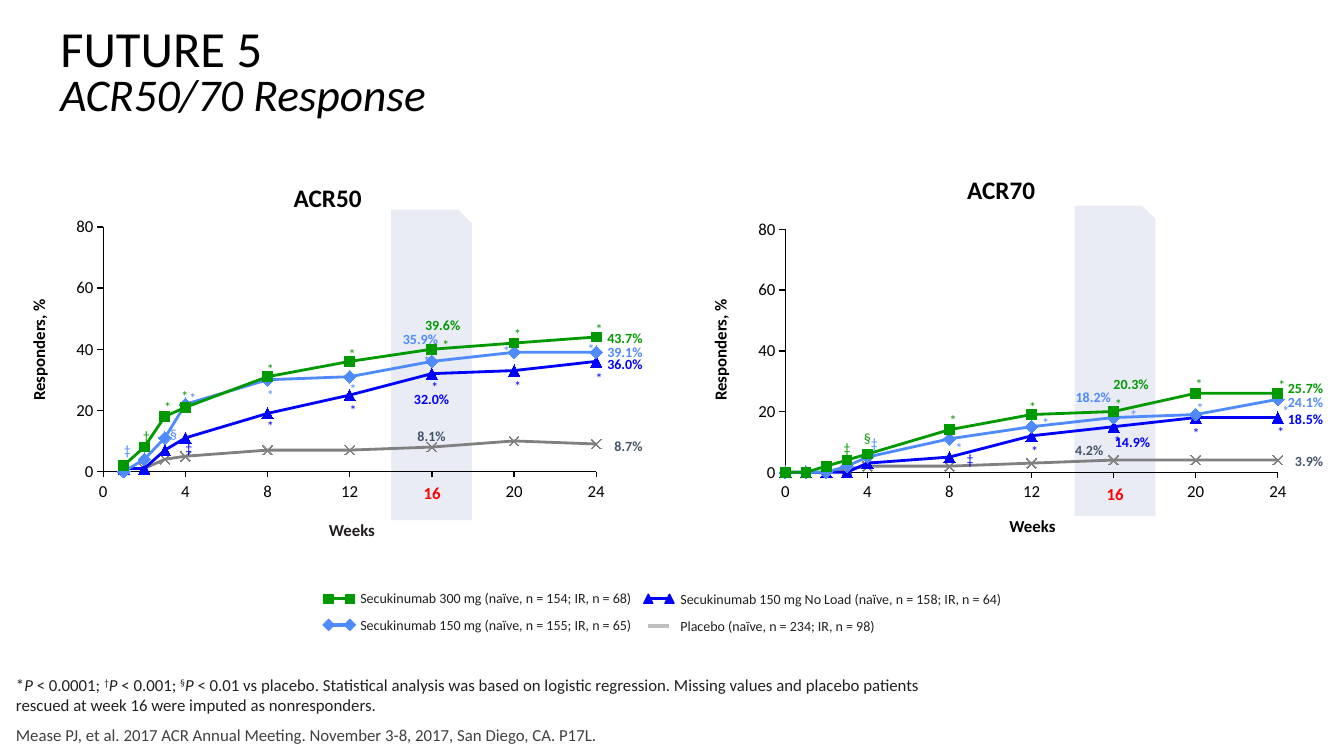
"""Build the FUTURE 5 slide: ACR50 and ACR70 response curves on a 0.1 inch grid."""
from dataclasses import dataclass
from typing import NamedTuple, Optional

from lxml.etree import SubElement
from pptx import Presentation
from pptx.chart.data import XyChartData
from pptx.dml.color import RGBColor
from pptx.enum.chart import XL_CHART_TYPE, XL_MARKER_STYLE, XL_TICK_MARK
from pptx.enum.shapes import MSO_CONNECTOR, MSO_SHAPE
from pptx.enum.text import MSO_ANCHOR, PP_ALIGN
from pptx.oxml import parse_xml
from pptx.oxml.ns import nsdecls, qn
from pptx.util import Inches, Pt

COLUMNS, ROWS, CELL = 133.3, 75, 0.1
FACE = "Calibri"
GREEN, SKY, BLUE, GREY, SLATE = "009900", "4F8AFF", "0000FF", "808080", "44546A"
BLACK, INK, BAND, RED = "000000", "231F20", "E9EBF5", "FF0000"
LEFT, CENTER, RIGHT = PP_ALIGN.LEFT, PP_ALIGN.CENTER, PP_ALIGN.RIGHT
INSETS, FLUSH = (1, 0.5, 1, 0.5), (0, 0, 0, 0)
WEEKS = (0, 1, 2, 3, 4, 8, 12, 16, 20, 24)


class Box(NamedTuple):
    left: float
    top: float
    width: float
    height: float


class Style(NamedTuple):
    colour: str
    marker: XL_MARKER_STYLE
    size: int


class Label(NamedTuple):
    text: str
    left: float
    top: float
    colour: str
    align: PP_ALIGN = RIGHT


class Span(NamedTuple):
    text: str
    italic: bool = False
    raised: bool = False


class Key(NamedTuple):
    left: float
    middle: float
    colour: str
    shape: Optional[MSO_SHAPE] = None
    turn: int = 0


@dataclass
class Panel:
    title: str
    title_box: Box
    band: Box
    chart: Box
    plot: tuple
    curves: tuple
    marks: dict
    labels: tuple
    week_box: Box
    weeks: Box
    weeks_colour: str
    axis_title: Box


STYLES = (Style(GREEN, XL_MARKER_STYLE.SQUARE, 7), Style(SKY, XL_MARKER_STYLE.DIAMOND, 9),
          Style(BLUE, XL_MARKER_STYLE.TRIANGLE, 8), Style(GREY, XL_MARKER_STYLE.X, 7))

ACR70 = Panel(
    "ACR70", Box(90.8, 16.8, 17, 4), Box(106.6, 20.4, 8, 30.8), Box(72.9, 20.6, 55.5, 30.9),
    (0.09, 0.07, 0.88, 0.78),
    ((0, 0, 2, 4, 6, 14, 19, 20, 26, 26), (0, 0, 0, 2, 5, 11, 15, 18, 19, 24),
     (0, 0, 0, 0, 3, 5, 12, 15, 18, 18), (0, 0, 0, 1, 2, 2, 3, 4, 4, 4)),
    {GREEN: (("‡", 82.7, 43.1), ("§", 84.7, 42.1), ("*", 93.2, 40.3), ("*", 101.1, 39),
             ("*", 109.6, 38.7), ("*", 117.6, 36.8), ("*", 125.8, 36.9)),
     SKY: (("‡", 85.4, 42.6), ("*", 93.8, 43.1), ("*", 102.4, 40.6), ("*", 111.1, 39.8),
           ("*", 117.7, 39.1), ("*", 126.2, 39.4)),
     BLUE: (("‡", 94.9, 44.2), ("*", 101.3, 43.4), ("*", 109.5, 42.4), ("*", 117.3, 41.6),
            ("*", 125.7, 41.5))},
    (Label("3.9%", 126.2, 44.4, SLATE), Label("24.1%", 126.2, 38.5, SKY),
     Label("18.5%", 126.2, 40.2, BLUE), Label("25.7%", 126.2, 37.2, GREEN),
     Label("4.2%", 104.4, 43.3, SLATE), Label("18.2%", 105.7, 38.1, SKY, LEFT),
     Label("14.9%", 109.6, 42.5, BLUE, LEFT), Label("20.3%", 108.9, 36.8, GREEN)),
    Box(109.6, 48, 2, 2.9), Box(78, 51.2, 48.8, 2), BLACK, Box(59.5, 33.2, 23.8, 3))

ACR50 = Panel(
    "ACR50", Box(24, 17.6, 17, 4), Box(38.8, 20.8, 8, 30.8), Box(4.56, 19.78, 56.86, 30.35),
    (0.1, 0.09, 0.86, 0.8),
    ((None, 2, 8, 18, 21, 31, 36, 40, 42, 44), (None, 0, 4, 11, 22, 30, 31, 36, 39, 39),
     (None, 1, 1, 7, 11, 19, 25, 32, 33, 36), (None, 1, 1, 4, 5, 7, 7, 8, 10, 9)),
    {GREEN: (("†", 13.2, 41.9), ("*", 15.3, 39), ("*", 17, 38), ("*", 25.5, 35.3),
             ("*", 33.6, 33.8), ("*", 42.9, 32.9), ("*", 50, 31.8), ("*", 58.1, 31.3)),
     SKY: (("‡", 11.3, 43.3), ("§", 15.9, 41.7), ("*", 17.8, 38.2), ("*", 25.5, 37.9),
           ("*", 33.7, 37.3), ("*", 41, 34.5), ("*", 48.9, 33.5), ("*", 57.3, 33.3)),
     BLUE: (("‡", 17.4, 43.1), ("*", 25.5, 40.9), ("*", 33.7, 39.3), ("*", 41.8, 37.1),
            ("*", 50, 37), ("*", 58.1, 36.2))},
    (Label("8.7%", 58.7, 42.9, SLATE), Label("39.1%", 58.7, 33.6, SKY),
     Label("36.0%", 58.7, 34.8, BLUE), Label("43.7%", 58.7, 32.2, GREEN),
     Label("8.1%", 39.8, 41.9, SLATE, CENTER), Label("35.9%", 38.7, 32.3, SKY, CENTER),
     Label("32.0%", 39.8, 38.3, BLUE, CENTER), Label("39.6%", 40.9, 30.9, GREEN, CENTER)),
    Box(41.5, 47.9, 2.7, 2.9), Box(10.5, 51.6, 48.8, 2), INK, Box(-8.3, 33.2, 24.2, 3))

KEYS = (Key(32.6, 59.4, GREEN, MSO_SHAPE.RECTANGLE), Key(32.6, 62, SKY, MSO_SHAPE.RECTANGLE, 45),
        Key(64.3, 59.4, BLUE, MSO_SHAPE.ISOSCELES_TRIANGLE), Key(64.3, 62.1, "BFBFBF"))

FOOTNOTE = (Span("*"), Span("P", True), Span(" < 0.0001; "), Span("†", raised=True),
            Span("P", True), Span(" < 0.001; "), Span("§", raised=True), Span("P", True),
            Span(" < 0.01 vs placebo. Statistical analysis was based on logistic regression. "
                 "Missing values and placebo patients rescued at week 16 were imputed as "
                 "nonresponders."))


def cells(*counts: float) -> list:
    """Turn counts of grid cells into lengths."""
    return [Inches(round(count * CELL, 3)) for count in counts]


def rgb(value: str) -> RGBColor:
    """Turn a hex string into a colour."""
    return RGBColor.from_string(value)


def add_shape(page, kind: MSO_SHAPE, box: Box, colour: str, outline: bool = False):
    """Draw a filled preset shape."""
    shape = page.shapes.add_shape(kind, *cells(*box))
    shape.shadow.inherit = False
    shape.fill.solid()
    shape.fill.fore_color.rgb = rgb(colour)
    if outline:
        shape.line.color.rgb = rgb(colour)
        shape.line.width = Pt(1)
    else:
        shape.line.fill.background()
    return shape


def write(shape, text: str, size: float, colour: str, bold: bool = False, align=LEFT,
          anchor=MSO_ANCHOR.TOP, insets: tuple = INSETS):
    """Put formatted text into a shape."""
    frame = shape.text_frame
    frame.word_wrap = True
    frame.vertical_anchor = anchor
    frame.margin_left, frame.margin_top, frame.margin_right, frame.margin_bottom = cells(*insets)
    frame.text = text
    for para in frame.paragraphs:
        para.alignment = align
        for span in para.runs:
            span.font.name, span.font.size, span.font.bold = FACE, Pt(size), bold
            span.font.color.rgb = rgb(colour)
    return shape


def add_text(page, box: Box, text: str, size: float, colour: str, **options):
    """Add a text box and write into it."""
    return write(page.shapes.add_textbox(*cells(*box)), text, size, colour, **options)


def style_axis(axis, top: int, step: int) -> None:
    """Format one black axis with outer ticks."""
    axis.minimum_scale, axis.maximum_scale, axis.major_unit = 0, top, step
    axis.has_major_gridlines = False
    axis.major_tick_mark, axis.minor_tick_mark = XL_TICK_MARK.OUTSIDE, XL_TICK_MARK.NONE
    axis.format.line.color.rgb = rgb(BLACK)
    axis.format.line.width = Pt(1)
    font = axis.tick_labels.font
    font.name, font.size, font.color.rgb = FACE, Pt(12), rgb(BLACK)


def add_curves(page, panel: Panel) -> None:
    """Draw the response curves of one panel, leaving missing values blank."""
    data = XyChartData()
    for number, values in enumerate(panel.curves, 1):
        series = data.add_series(f"Series {number}")
        for week, value in zip(WEEKS, values):
            series.add_data_point(week, value)
    chart = page.shapes.add_chart(XL_CHART_TYPE.XY_SCATTER_LINES, *cells(*panel.chart), data).chart
    root = chart.element
    for point in list(root.iter(qn("c:pt"))):
        if point.find(qn("c:v")).text in (None, "", "None"):
            point.getparent().remove(point)
    chart.has_legend = chart.has_title = False
    chart.font.name, chart.font.size, chart.font.color.rgb = FACE, Pt(18), rgb(BLACK)
    chart.plots[0].vary_by_categories = False
    style_axis(chart.category_axis, 24, 4)
    style_axis(chart.value_axis, 80, 20)
    for series, style in zip(chart.plots[0].series, STYLES):
        series.smooth = False
        series.marker.style, series.marker.size = style.marker, style.size
        for line in (series.format.line, series.marker.format.line):
            line.color.rgb = rgb(style.colour)
        series.format.line.width = Pt(2)
        fill = series.marker.format.fill
        if style.marker == XL_MARKER_STYLE.X:
            fill.background()
        else:
            fill.solid()
            fill.fore_color.rgb = rgb(style.colour)
    area = root.find(".//" + qn("c:plotArea"))
    for layout in area.findall(qn("c:layout")):
        area.remove(layout)
    layout = parse_xml(f"<c:layout {nsdecls('c')}><c:manualLayout/></c:layout>")
    names = ("layoutTarget", "xMode", "yMode", "x", "y", "w", "h")
    for name, value in zip(names, ("inner", "edge", "edge", *panel.plot)):
        SubElement(layout[0], qn("c:" + name)).set("val", str(value))
    area.insert(0, layout)
    clear = f"<c:spPr {nsdecls('c', 'a')}><a:noFill/><a:ln><a:noFill/></a:ln></c:spPr>"
    area.append(parse_xml(clear))
    root.find(qn("c:txPr")).addprevious(parse_xml(clear))


def add_panel(page, panel: Panel) -> None:
    """Draw one chart with its band, marks and labels."""
    add_shape(page, MSO_SHAPE.SNIP_1_RECTANGLE, panel.band, BAND)
    add_text(page, panel.title_box, panel.title, 18, BLACK, bold=True, align=CENTER)
    add_curves(page, panel)
    for colour, marks in panel.marks.items():
        for symbol, left, top in marks:
            add_text(page, Box(left, top, 2.7, 2.7), symbol, 10, colour, insets=(1, 0.5, 0, 0.5))
    week = add_shape(page, MSO_SHAPE.RECTANGLE, panel.week_box, BAND)
    write(week, "16", 12, RED, bold=True, align=CENTER, insets=(0, 0, 0, 0.9))
    for label in panel.labels:
        add_text(page, Box(label.left, label.top, 6, 2.7), label.text, 10, label.colour,
                 bold=True, align=label.align)
    add_text(page, panel.weeks, "Weeks", 12, panel.weeks_colour, bold=True, align=CENTER,
             insets=FLUSH)
    add_text(page, panel.axis_title, "Responders, %", 12, BLACK, bold=True, align=CENTER,
             anchor=MSO_ANCHOR.BOTTOM).rotation = 270


def add_key(page, key: Key) -> None:
    """Draw one legend sample: a line with a marker at each end."""
    ends = (key.left, key.left + 2.1)
    if key.shape is not None:
        for end in ends:
            box = Box(end - 0.45, key.middle - 0.45, 0.9, 0.9)
            add_shape(page, key.shape, box, key.colour, not key.turn).rotation = key.turn
    line = page.shapes.add_connector(
        MSO_CONNECTOR.STRAIGHT, *cells(ends[0], key.middle, ends[1], key.middle))
    line.line.color.rgb = rgb(key.colour)
    line.line.width = Pt(2.25)
    SubElement(line.element.spPr, qn("a:effectLst"))


def add_legend(page) -> None:
    """Draw the two legend columns."""
    columns = (
        (Box(34.75, 58, 29.9, 5.4), "Secukinumab 300 mg (naïve, n = 154; IR, n = 68)\n"
                                    "Secukinumab 150 mg (naïve, n = 155; IR, n = 65)"),
        (Box(66.5, 58.1, 34.7, 5.4), "Secukinumab 150 mg No Load (naïve, n = 158; IR, n = 64)\n"
                                     "Placebo (naïve, n = 234; IR, n = 98)"))
    for box, text in columns:
        add_text(page, box, text, 10, INK).text_frame.paragraphs[1].space_before = Pt(7.3)
    for key in KEYS:
        add_key(page, key)


def add_wording(page) -> None:
    """Add the title, the footnote and the citation."""
    title = add_text(page, Box(5, 2, 106.9, 10.8), "FUTURE 5\nACR50/70 Response", 36.1, BLACK,
                     anchor=MSO_ANCHOR.MIDDLE)
    for para in title.text_frame.paragraphs:
        para.line_spacing = 0.8
    subtitle = title.text_frame.paragraphs[1].runs[0].font
    subtitle.size, subtitle.italic = Pt(32.4), True
    add_text(page, Box(0.6, 71.4, 66.3, 3),
             "Mease PJ, et al. 2017 ACR Annual Meeting. November 3-8, 2017, San Diego, CA. P17L.",
             12, "404040", anchor=MSO_ANCHOR.BOTTOM)
    note = add_text(page, Box(0.6, 66.3, 93.8, 5.1), "", 12, INK, anchor=MSO_ANCHOR.BOTTOM)
    for part in FOOTNOTE:
        span = note.text_frame.paragraphs[0].add_run()
        span.text = part.text
        span.font.name, span.font.size, span.font.italic = FACE, Pt(12), part.italic
        span.font.color.rgb = rgb(INK)
        if part.raised:
            span._r.get_or_add_rPr().set("baseline", "30000")


def main() -> None:
    """Build and save the deck."""
    deck = Presentation()
    deck.slide_width, deck.slide_height = cells(COLUMNS, ROWS)
    page = deck.slides.add_slide(deck.slide_layouts[6])
    add_panel(page, ACR70)
    add_wording(page)
    add_panel(page, ACR50)
    add_legend(page)
    deck.save("out.pptx")


if __name__ == "__main__":
    main()
